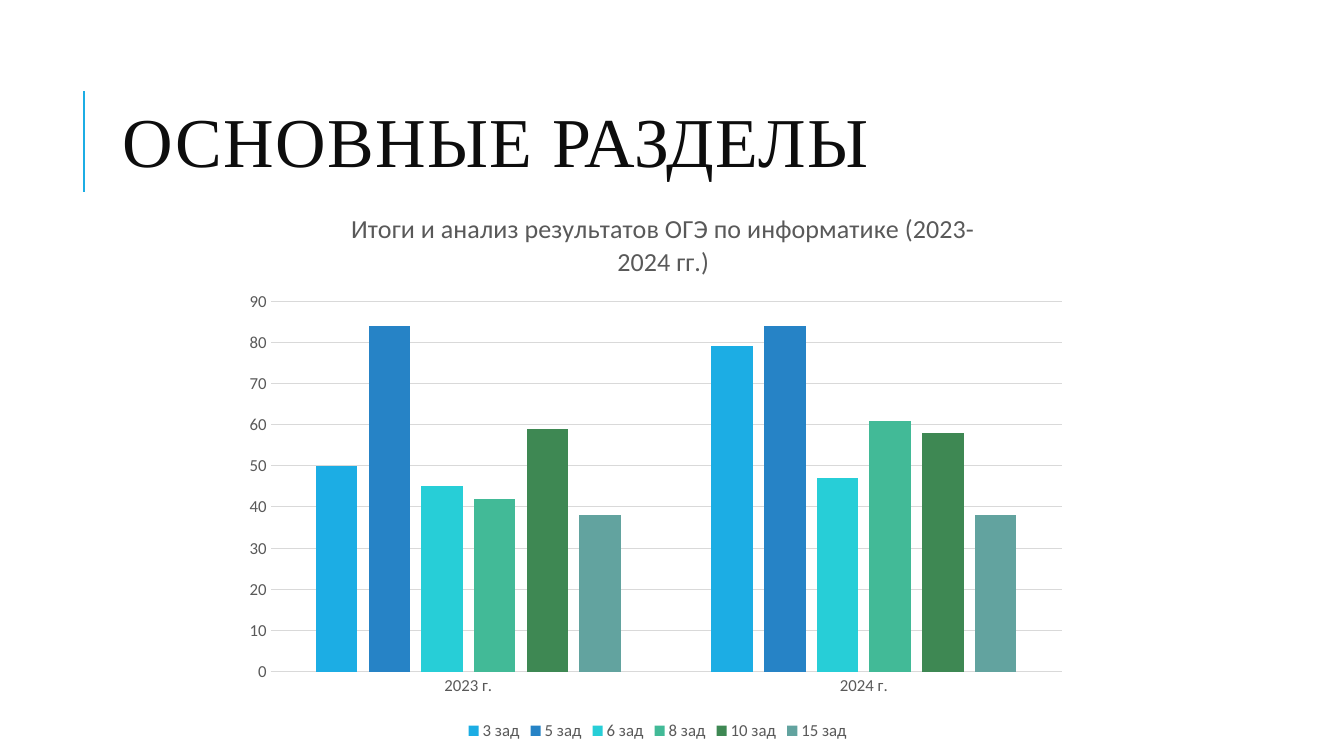
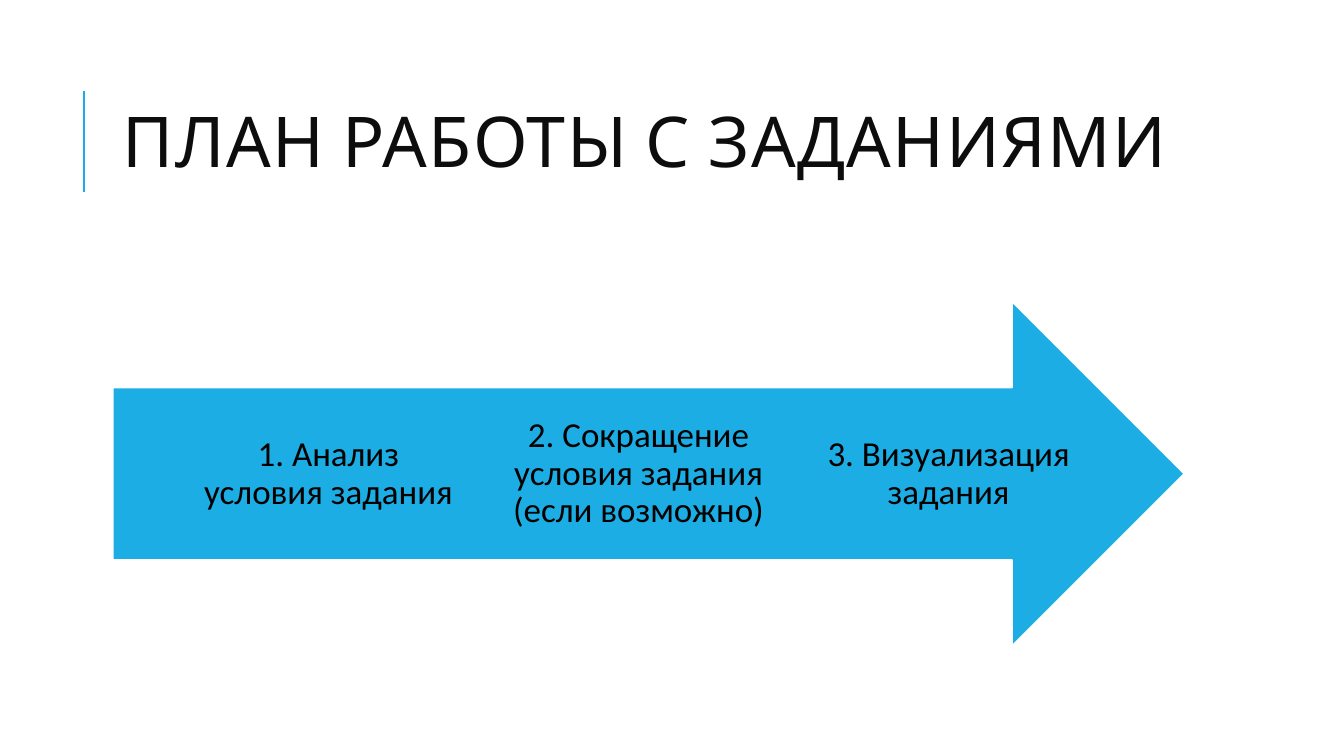
import pptx
import pptx.util
import pptx.chart.data
import pptx.dml.color
import pptx.enum.chart
import pptx.enum.shapes
import pptx.enum.text
import pptx.oxml

Pt = pptx.util.Pt
RGB = pptx.dml.color.RGBColor
Align = pptx.enum.text.PP_ALIGN
Anchor = pptx.enum.text.MSO_ANCHOR

BLUE = RGB(0x1C, 0xAD, 0xE4)
WHITE = RGB(0xFF, 0xFF, 0xFF)
BLACK = RGB(0x00, 0x00, 0x00)
INK = RGB(0x0D, 0x0D, 0x0D)
GRAY = RGB(0x59, 0x59, 0x59)
RULE = RGB(0xD9, 0xD9, 0xD9)
BODY = "Calibri"

HEAD = (80.6, 46, 765.4, 118)
PLOT = (169.2, 131, 601.2, 401)
ARROW = (80.6, 215.3, 765.4, 246.2)

CATS = ["2023 г.", "2024 г."]
TASKS = [
    ("3 зад", (50, 79), BLUE),
    ("5 зад", (84, 84), RGB(0x26, 0x83, 0xC6)),
    ("6 зад", (45, 47), RGB(0x27, 0xCE, 0xD7)),
    ("8 зад", (42, 61), RGB(0x42, 0xBA, 0x97)),
    ("10 зад", (59, 58), RGB(0x3E, 0x88, 0x53)),
    ("15 зад", (38, 38), RGB(0x62, 0xA3, 0x9F)),
]
STEPS = [
    "1. Анализ условия задания",
    "2. Сокращение условия задания (если возможно)",
    "3. Визуализация задания",
]


def style(font, size, color, name=BODY):
    font.size, font.name, font.bold = Pt(size), name, False
    font.color.rgb = color


def add_text(slide, box, text, size, color, name, gap):
    shape = slide.shapes.add_textbox(*map(Pt, box))
    frame = shape.text_frame
    frame.word_wrap = True
    frame.vertical_anchor = Anchor.MIDDLE
    frame.text = text
    para = frame.paragraphs[0]
    para.line_spacing = gap
    style(para.runs[0].font, size, color, name)
    return frame


def add_head(slide, box, text, name):
    """Accent rule and slide title."""
    left, top, _, high = box
    x, mid = left - 20.6, top + high / 2 - 4.2
    rule = slide.shapes.add_connector(
        pptx.enum.shapes.MSO_CONNECTOR.STRAIGHT,
        Pt(x), Pt(mid + 36), Pt(x), Pt(mid - 36))
    rule.line.color.rgb = BLUE
    rule.line.width = Pt(1.5)
    props = rule.element.spPr
    props.append(pptx.oxml.parse_xml(
        '<a:effectLst xmlns:a='
        '"http://schemas.openxmlformats.org/drawingml/2006/main"/>'))
    frame = add_text(slide, box, text, 50, INK, name, 0.8)
    run = frame.paragraphs[0].runs[0]
    run.font._element.set("spc", "100")


def layout(x, y, w=None, h=None):
    """Manual chart layout, in shares of the chart area."""
    def tags(names, value):
        return "".join(f'<c:{n} val="{v}"/>' for n, v in zip(names, value))
    size = "" if w is None else tags("wh", (w, h))
    inner = '<c:layoutTarget val="inner"/>' if size else ""
    modes = tags(("xMode", "yMode"), ("edge", "edge"))
    return pptx.oxml.parse_xml(
        '<c:layout xmlns:c='
        '"http://schemas.openxmlformats.org/drawingml/2006/chart">'
        f'<c:manualLayout>{inner}{modes}{tags("xy", (x, y))}{size}'
        '</c:manualLayout></c:layout>')


def add_plot(slide, box):
    """Column chart of results by task."""
    enum = pptx.enum.chart
    data = pptx.chart.data.CategoryChartData()
    data.categories = CATS
    for name, vals, _ in TASKS:
        data.add_series(name, vals)
    chart = slide.shapes.add_chart(
        enum.XL_CHART_TYPE.COLUMN_CLUSTERED, *map(Pt, box), data).chart
    style(chart.font, 12, GRAY)

    # Title
    frame = chart.chart_title.text_frame
    frame.text = "Итоги и анализ результатов ОГЭ по информатике (2023-2024 гг.)"
    style(frame.paragraphs[0].runs[0].font, 18.6, GRAY)
    chart.chart_title.include_in_layout = False
    title = chart.chart_title._element
    for old in title.findall(pptx.oxml.ns.qn("c:layout")):
        title.remove(old)
    title.find(pptx.oxml.ns.qn("c:tx")).addnext(layout(0.13, 0.04))

    # Legend
    chart.has_legend = True
    chart.legend.position = enum.XL_LEGEND_POSITION.BOTTOM
    chart.legend.include_in_layout = False
    style(chart.legend.font, 12, GRAY)

    # Axes
    for axis in (chart.category_axis, chart.value_axis):
        axis.major_tick_mark = enum.XL_TICK_MARK.NONE
        axis.minor_tick_mark = enum.XL_TICK_MARK.NONE
        style(axis.tick_labels.font, 12, GRAY)
    val = chart.value_axis
    val.minimum_scale, val.maximum_scale, val.major_unit = 0, 90, 10
    val.format.line.fill.background()
    val.has_major_gridlines = True
    for line in (chart.category_axis.format.line,
                 val.major_gridlines.format.line):
        line.color.rgb = RULE
        line.width = Pt(0.75)

    # Columns
    plot = chart.plots[0]
    plot.gap_width, plot.overlap = 219, -27
    plot.vary_by_categories = False
    for item, (_, _, color) in zip(plot.series, TASKS):
        item.format.fill.solid()
        item.format.fill.fore_color.rgb = color
    area = plot._element.getparent()
    for old in area.findall(pptx.oxml.ns.qn("c:layout")):
        area.remove(old)
    area.insert(0, layout(0.04, 0.21, 0.94, 0.66))


def add_steps(slide, box):
    """Wide arrow with equal steps inside its shaft."""
    left, top, wide, high = box
    arrow = slide.shapes.add_shape(
        pptx.enum.shapes.MSO_SHAPE.RIGHT_ARROW, *map(Pt, box))
    arrow.shadow.inherit = False
    arrow.fill.solid()
    arrow.fill.fore_color.rgb = BLUE
    arrow.line.color.rgb = WHITE
    arrow.line.width = Pt(1.25)

    cell, gap = 184.3, 37.2
    start = left + 61.8
    for i, step in enumerate(STEPS):
        spot = (start + i * (cell + gap), top + high / 4, cell, high / 2)
        frame = add_text(slide, spot, step, 25, BLACK, BODY, 0.9)
        frame.margin_left = frame.margin_right = 0
        frame.margin_top = frame.margin_bottom = Pt(20)
        frame.paragraphs[0].alignment = Align.CENTER


def main():
    deck = pptx.Presentation()
    deck.slide_width, deck.slide_height = Pt(960), Pt(540)
    pages = [
        ("ОСНОВНЫЕ РАЗДЕЛЫ", "Times New Roman", add_plot, PLOT),
        ("ПЛАН РАБОТЫ С ЗАДАНИЯМИ", "Cabin", add_steps, ARROW),
    ]
    for text, name, fill, box in pages:
        slide = deck.slides.add_slide(deck.slide_layouts[6])
        add_head(slide, HEAD, text, name)
        fill(slide, box)
    deck.save("out.pptx")


if __name__ == "__main__":
    main()
